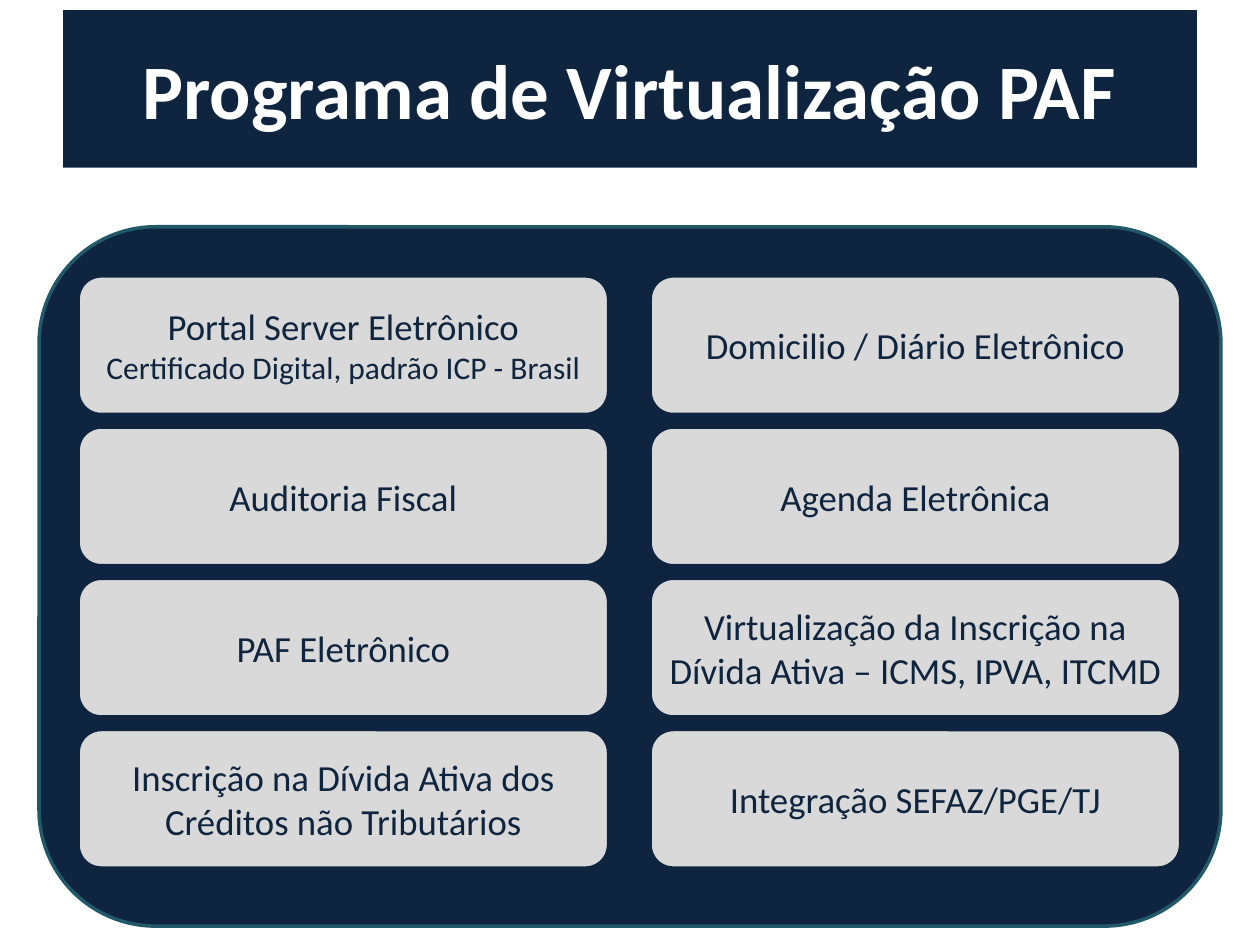
from pptx import Presentation
from pptx.dml.color import RGBColor as Rgb
from pptx.enum.shapes import MSO_SHAPE as Kind
from pptx.enum.text import MSO_ANCHOR as Anchor, PP_ALIGN as Align
from pptx.util import Inches, Pt

COLORS = {"navy": "0F243E", "teal": "215968", "gray": "D9D9D9", "white": "FFFFFF"}
FONT = "Calibri"
LEFT, TOP = 0.62, 2.19
WIDE, HIGH = 4.21, 1.1
STEP_X, STEP_Y = 4.54, 1.2
ROWS = [
    (["Portal Server Eletrônico", "Certificado Digital, padrão ICP - Brasil"],
     ["Domicilio / Diário Eletrônico"]),
    (["Auditoria Fiscal"], ["Agenda Eletrônica"]),
    (["PAF Eletrônico"],
     ["Virtualização da Inscrição na Dívida Ativa – ICMS, IPVA, ITCMD"]),
    (["Inscrição na Dívida Ativa dos Créditos não Tributários"],
     ["Integração SEFAZ/PGE/TJ"]),
]


class Deck:
    """Holds the style and the current slide, and draws each kind of element."""

    def __init__(self):
        self.prs = Presentation()
        self.prs.slide_width, self.prs.slide_height = Inches(10), Inches(7.5)
        self.slide = self.prs.slides.add_slide(self.prs.slide_layouts[5])

    def tint(self, part, name):
        part.fill.solid()
        part.fill.fore_color.rgb = Rgb.from_string(COLORS[name])

    def label(self, shape, lines, sizes, color, bold=False):
        frame = shape.text_frame
        frame.text = "\n".join(lines)
        frame.word_wrap = True
        frame.vertical_anchor = Anchor.MIDDLE
        frame.margin_left = frame.margin_right = Inches(0.05)
        for para, size in zip(frame.paragraphs, sizes):
            para.alignment = Align.CENTER
            font = para.font
            font.name, font.size, font.bold = FONT, Pt(size), bold
            font.color.rgb = Rgb.from_string(COLORS[color])

    def title(self, text, *box):
        shape = self.slide.shapes.title
        shape.left, shape.top, shape.width, shape.height = map(Inches, box)
        self.tint(shape, "navy")
        self.label(shape, [text], [44], "white", True)

    def panel(self, fill, edge, *box):
        shape = self.slide.shapes.add_shape(Kind.ROUNDED_RECTANGLE, *map(Inches, box))
        shape.shadow.inherit = False
        self.tint(shape, fill)
        shape.line.color.rgb = Rgb.from_string(COLORS[edge])
        shape.line.width = Pt(2)
        return shape

    def card(self, col, row, lines):
        shape = self.panel("gray", "navy", LEFT + col * STEP_X, TOP + row * STEP_Y, WIDE, HIGH)
        self.label(shape, lines, [21, 18], "navy")


def main():
    deck = Deck()
    deck.title("Programa de Virtualização PAF", 0.5, 0.08, 9, 1.25)
    deck.panel("navy", "teal", 0.31, 1.8, 9.38, 5.55)
    for row, cells in enumerate(ROWS):
        for col, lines in enumerate(cells):
            deck.card(col, row, lines)
    deck.prs.save("out.pptx")


if __name__ == "__main__":
    main()
